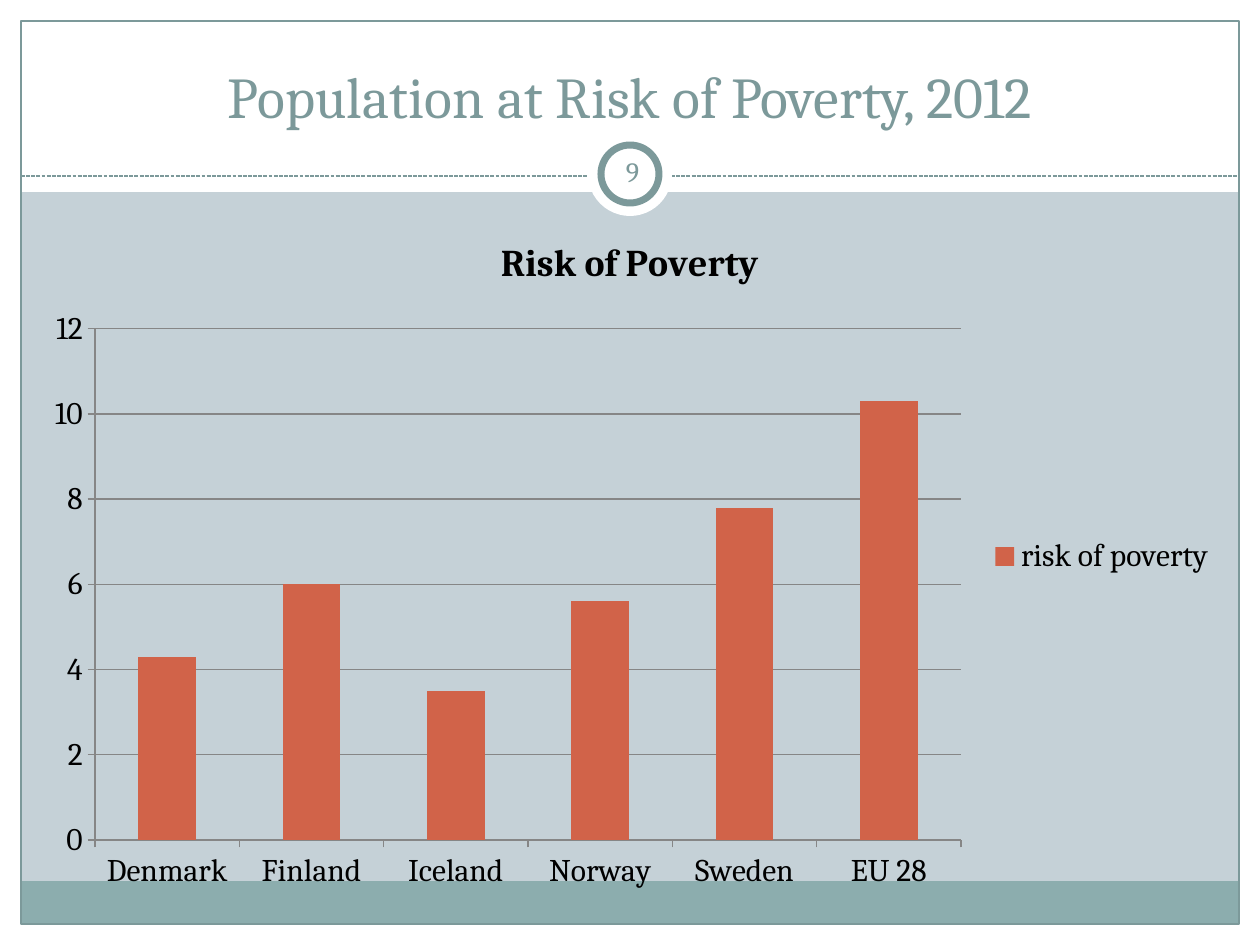
from lxml import etree
from pptx import Presentation
from pptx import util as u
from pptx.chart.data import CategoryChartData
from pptx.dml.color import RGBColor
from pptx.enum import chart as ch, dml, shapes, text
from pptx.oxml.ns import qn

PX = 914400 / 126
WIDTH, HEIGHT = 1260, 945
MARGIN = 21
FONT = "Cambria"
COLORS = {"back": "C5D1D7", "paper": "FFFFFF", "footer": "8CADAE", "trim": "7C999A",
          "bar": "D16349", "ink": "000000", "grid": "868686"}
RISK = {"Denmark": 4.3, "Finland": 6, "Iceland": 3.5, "Norway": 5.6, "Sweden": 7.8, "EU 28": 10.3}


def emu(*lengths):
    """Turn px lengths into EMU."""
    return [u.Emu(round(length * PX)) for length in lengths]


def rgb(name):
    """Look up a named colour."""
    return RGBColor.from_string(COLORS[name])


def set_format(target, **values):
    """Set each given attribute on the target."""
    for key, value in values.items():
        setattr(target, key, value)


def set_font(font, size, color, bold=False):
    """Apply the slide's typeface with a size and colour."""
    set_format(font, name=FONT, size=u.Pt(size), bold=bold)
    font.color.rgb = rgb(color)


def add_panel(slide, box, fill=None, line=None, weight=0.75, kind=shapes.MSO_SHAPE.RECTANGLE):
    """Draw a plain shape in a px box."""
    panel = slide.shapes.add_shape(kind, *emu(*box))
    panel.shadow.inherit = False
    if fill:
        panel.fill.solid()
        panel.fill.fore_color.rgb = rgb(fill)
    else:
        panel.fill.background()
    if line:
        panel.line.color.rgb = rgb(line)
        panel.line.width = u.Pt(weight)
    else:
        panel.line.fill.background()


def write_text(holder, words, size, anchor):
    """Put one centred paragraph into a text holder."""
    frame = holder.text_frame
    set_format(frame, text=words, word_wrap=True, vertical_anchor=anchor,
               auto_size=text.MSO_AUTO_SIZE.NONE)
    paragraph = frame.paragraphs[0]
    paragraph.alignment = text.PP_ALIGN.CENTER
    set_font(paragraph.runs[0].font, size, "trim")


def add_frame(slide, width, height, header):
    """Draw the white margins, header, footer band and border."""
    for box in ((0, height - MARGIN, width, MARGIN), (0, 0, width, header),
                (0, 0, MARGIN, height), (width - MARGIN, 0, MARGIN, height)):
        add_panel(slide, box, "paper")
    inner = width - 2 * MARGIN
    add_panel(slide, (MARGIN, height - MARGIN - 43, inner, 43), "footer")
    add_panel(slide, (MARGIN, MARGIN, inner, height - 2 * MARGIN), line="trim")


def add_divider(slide, left, top, width):
    """Draw the dashed rule under the title."""
    rule = slide.shapes.add_connector(shapes.MSO_CONNECTOR.STRAIGHT,
                                      *emu(left, top, left + width, top))
    rule.line.color.rgb = rgb("trim")
    set_format(rule.line, width=u.Pt(0.75), dash_style=dml.MSO_LINE.SQUARE_DOT)
    etree.SubElement(rule._element.spPr, qn("a:effectLst"))


def add_badge(slide, left, top, size, number):
    """Draw the ringed slide number."""
    oval = shapes.MSO_SHAPE.OVAL
    inset = 13
    ring = size - 2 * inset
    add_panel(slide, (left, top, size, size), "paper", kind=oval)
    add_panel(slide, (left + inset, top + inset, ring, ring), "paper", "trim", 4, oval)
    label = slide.shapes.add_textbox(*emu(left + inset, top + 9, 63, 60))
    pad = u.Inches(0.05)
    set_format(label.text_frame, margin_left=pad, margin_right=pad,
               margin_top=pad, margin_bottom=pad)
    write_text(label, number, 16, text.MSO_ANCHOR.MIDDLE)


def place_title(slide, box, words):
    """Move the title placeholder above the header and fill it."""
    title = slide.shapes.title
    slide.shapes._spTree.append(title._element)
    set_format(title, **dict(zip(("left", "top", "width", "height"), emu(*box))))
    write_text(title, words, 33, text.MSO_ANCHOR.BOTTOM)


def add_risk_chart(slide, box):
    """Plot the risk of poverty by country."""
    risk_data = CategoryChartData(number_format="General")
    risk_data.categories = list(RISK)
    risk_data.add_series("risk of poverty", list(RISK.values()))
    chart = slide.shapes.add_chart(ch.XL_CHART_TYPE.COLUMN_CLUSTERED, *emu(*box), risk_data).chart
    set_font(chart.font, 18, "ink")
    set_format(chart, has_title=True, has_legend=True)
    heading = chart.chart_title.text_frame
    heading.text = "Risk of Poverty"
    set_font(heading.paragraphs[0].runs[0].font, 21.6, "ink", True)
    set_format(chart.legend, position=ch.XL_LEGEND_POSITION.RIGHT, include_in_layout=False)
    set_format(chart.plots[0], gap_width=150, vary_by_categories=False)
    bars = chart.plots[0].series[0].format.fill
    bars.solid()
    bars.fore_color.rgb = rgb("bar")
    set_format(chart.value_axis, minimum_scale=0, maximum_scale=12, major_unit=2,
               has_major_gridlines=True)
    for axis in (chart.category_axis, chart.value_axis):
        axis.major_tick_mark = ch.XL_TICK_MARK.OUTSIDE
        axis.format.line.color.rgb = rgb("grid")
    chart.value_axis.major_gridlines.format.line.color.rgb = rgb("grid")


def main():
    """Build and save the slide."""
    deck = Presentation()
    deck.slide_width, deck.slide_height = emu(WIDTH, HEIGHT)
    slide = deck.slides.add_slide(deck.slide_layouts[5])
    slide.background.fill.solid()
    slide.background.fill.fore_color.rgb = rgb("back")
    add_frame(slide, WIDTH, HEIGHT, 192)
    add_divider(slide, MARGIN, 176, WIDTH - 2 * MARGIN)
    add_badge(slide, 588, 132, 84, "9")
    place_title(slide, (42, 31, 1176, 105), "Population at Risk of Poverty, 2012")
    add_risk_chart(slide, (31, 210, 1198, 693))
    deck.save("out.pptx")


if __name__ == "__main__":
    main()
